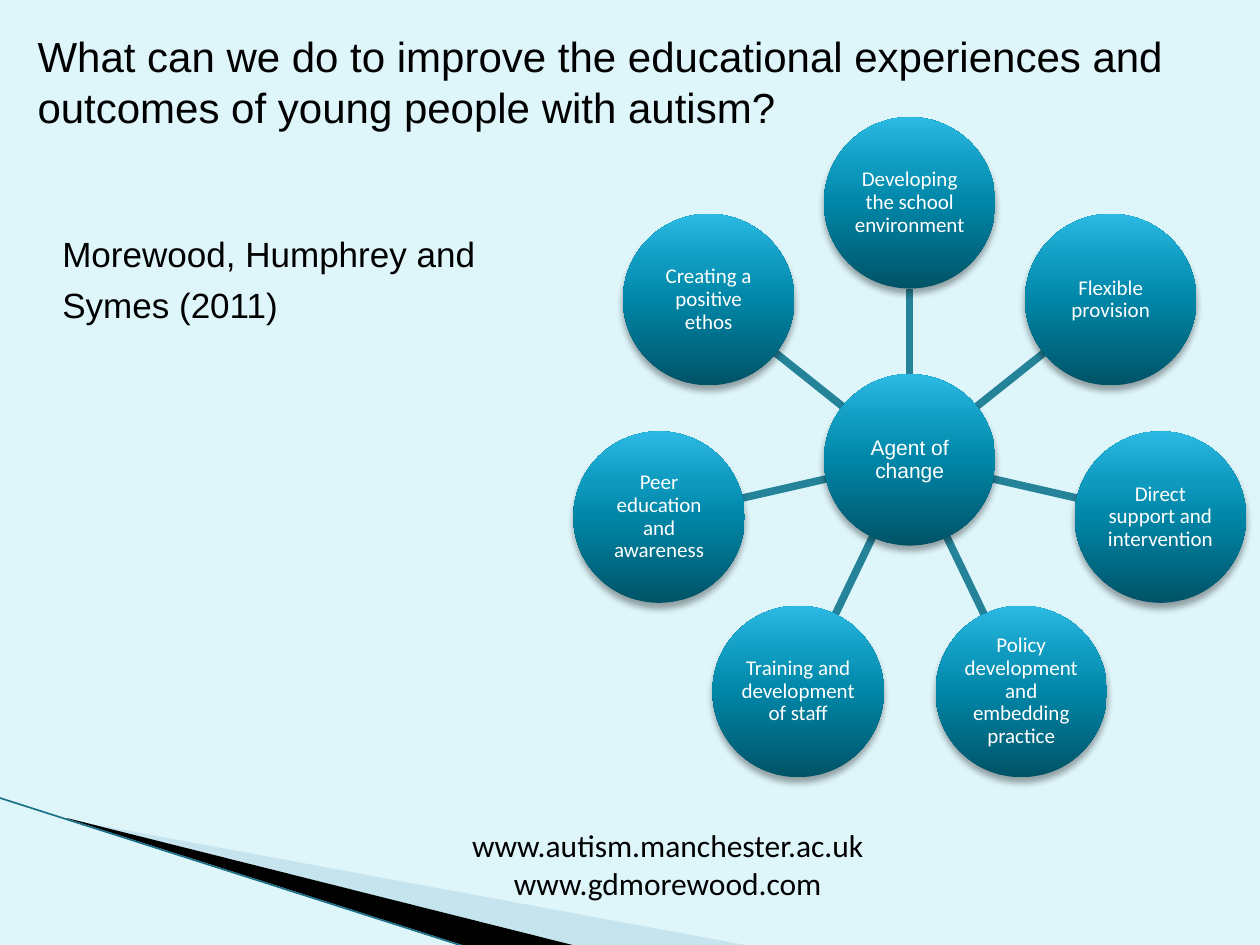
from copy import deepcopy
from math import cos, pi, sin

from lxml.etree import SubElement
from pptx import Presentation
from pptx.dml.color import RGBColor
from pptx.enum.shapes import MSO_CONNECTOR, MSO_SHAPE
from pptx.enum.text import MSO_ANCHOR, PP_ALIGN
from pptx.oxml import parse_xml
from pptx.oxml.ns import nsdecls, qn
from pptx.util import Pt

BACKGROUND = RGBColor(0xDE, 0xF5, 0xFA)
BLACK = RGBColor(0x00, 0x00, 0x00)
WHITE = RGBColor(0xFF, 0xFF, 0xFF)
PALE_BLUE = RGBColor(0xA0, 0xCB, 0xDC)
EDGE_TEAL = RGBColor(0x1C, 0x70, 0x89)
SPOKE_TEAL = RGBColor(0x24, 0x82, 0x99)
CIRCLE_STOPS = [
    (0, RGBColor(0x00, 0x53, 0x67)),
    (0.5, RGBColor(0x00, 0x86, 0xA7)),
    (0.7, RGBColor(0x0E, 0x9A, 0xBE)),
    (1, RGBColor(0x2C, 0xB9, 0xE3)),
]

HUB_X, HUB_Y = 519.84, 262.8
DIAMETER = 98
RADIUS = DIAMETER / 2
RING = 146.9
TOPICS = [
    "Developing the school environment",
    "Flexible provision",
    "Direct support and intervention",
    "Policy development and embedding practice",
    "Training and development of staff",
    "Peer education and awareness",
    "Creating a positive ethos",
]

deck = Presentation()
deck.slide_width, deck.slide_height = Pt(720), Pt(540)
page = deck.slides.add_slide(deck.slide_layouts[6])
page.background.fill.solid()
page.background.fill.fore_color.rgb = BACKGROUND


def write(paragraph, text, size, font, color):
    span = paragraph.add_run()
    span.text = text
    span.font.size = Pt(size)
    span.font.name = font
    span.font.color.rgb = color


def add_line(start_x, start_y, end_x, end_y, color, width):
    line = page.shapes.add_connector(
        MSO_CONNECTOR.STRAIGHT, Pt(start_x), Pt(start_y), Pt(end_x), Pt(end_y))
    line.line.color.rgb = color
    line.line.width = Pt(width)
    SubElement(line._element.spPr, qn("a:effectLst"))


# Corner decoration
wedges = [
    ([(39.6, 468.5), (428.4, 540.5), (328.3, 540.5), (39.6, 468)], PALE_BLUE, 40),
    ([(38.2, 467.5), (329, 540.5), (267.8, 541.2), (38.9, 468)], BLACK, 100),
]
for points, color, opacity in wedges:
    corners = [(Pt(x), Pt(y)) for x, y in points]
    builder = page.shapes.build_freeform(*corners[0])
    builder.add_line_segments(corners[1:], close=True)
    wedge = builder.convert_to_shape()
    wedge.shadow.inherit = False
    wedge.fill.solid()
    wedge.fill.fore_color.rgb = color
    wedge.line.fill.background()
    if opacity < 100:
        tint = wedge._element.spPr.find(qn("a:solidFill"))[0]
        SubElement(tint, qn("a:alpha"), val=str(opacity * 1000))
add_line(-0.7, 455.8, 267.1, 541.4, EDGE_TEAL, 0.95)

# Text boxes: position, anchor, alignment, size, font, paragraphs
texts = [
    ((201.6, 468.7, 360, 51), MSO_ANCHOR.TOP, PP_ALIGN.CENTER, 18, "Calibri",
     ["www.autism.manchester.ac.uk www.gdmorewood.com"]),
    ((14.4, 15.1, 692, 62.6), MSO_ANCHOR.MIDDLE, PP_ALIGN.LEFT, 24, "Arial",
     ["What can we do to improve the educational experiences and "
      "outcomes of young people with autism?"]),
    ((28.5, 129.5, 286, 355), MSO_ANCHOR.TOP, PP_ALIGN.LEFT, 20, "Arial",
     ["Morewood, Humphrey and", "Symes (2011)"]),
]
for place, anchor, alignment, size, font, lines in texts:
    box = page.shapes.add_textbox(*map(Pt, place))
    frame = box.text_frame
    frame.word_wrap = True
    frame.vertical_anchor = anchor
    for index, text in enumerate(lines):
        para = frame.add_paragraph() if index else frame.paragraphs[0]
        para.alignment = alignment
        if index:
            para.space_before = Pt(5)
        write(para, text, size, font, BLACK)

# Spokes run from the hub's edge to the edge of each topic circle
circles = [("Agent of change", "Arial", HUB_X, HUB_Y)]
for index, topic in enumerate(TOPICS):
    angle = 2 * pi * index / len(TOPICS)
    across, up = sin(angle), cos(angle)
    inner, outer = RADIUS, RING - RADIUS
    add_line(HUB_X + inner * across, HUB_Y - inner * up,
             HUB_X + outer * across, HUB_Y - outer * up, SPOKE_TEAL, 4.33)
    circles.append((topic, "Calibri", HUB_X + RING * across, HUB_Y - RING * up))

for label, font, center_x, center_y in circles:
    circle = page.shapes.add_shape(
        MSO_SHAPE.OVAL, Pt(center_x - RADIUS), Pt(center_y - RADIUS),
        Pt(DIAMETER), Pt(DIAMETER))
    circle.line.fill.background()
    circle.fill.gradient()
    circle.fill.gradient_angle = 90
    stop_list = circle._element.spPr.find(qn("a:gradFill")).find(qn("a:gsLst"))
    while len(stop_list) < len(CIRCLE_STOPS):
        stop_list.append(deepcopy(stop_list[0]))
    for stop, (position, color) in zip(circle.fill.gradient_stops, CIRCLE_STOPS):
        stop.position = position
        stop.color.rgb = color
    circle._element.spPr.append(parse_xml(
        f'<a:effectLst {nsdecls("a")}>'
        f'<a:outerShdw blurRad="{Pt(4)}" dist="{Pt(3)}" dir="5400000" rotWithShape="0">'
        '<a:srgbClr val="000000"><a:alpha val="35000"/></a:srgbClr>'
        '</a:outerShdw></a:effectLst>'))
    frame = circle.text_frame
    frame.word_wrap = True
    frame.vertical_anchor = MSO_ANCHOR.MIDDLE
    frame.margin_left = frame.margin_right = Pt(0.7)
    frame.margin_top = frame.margin_bottom = Pt(0.7)
    para = frame.paragraphs[0]
    para.alignment = PP_ALIGN.CENTER
    para.line_spacing = 0.9
    write(para, label, 12, font, WHITE)

deck.save("out.pptx")
